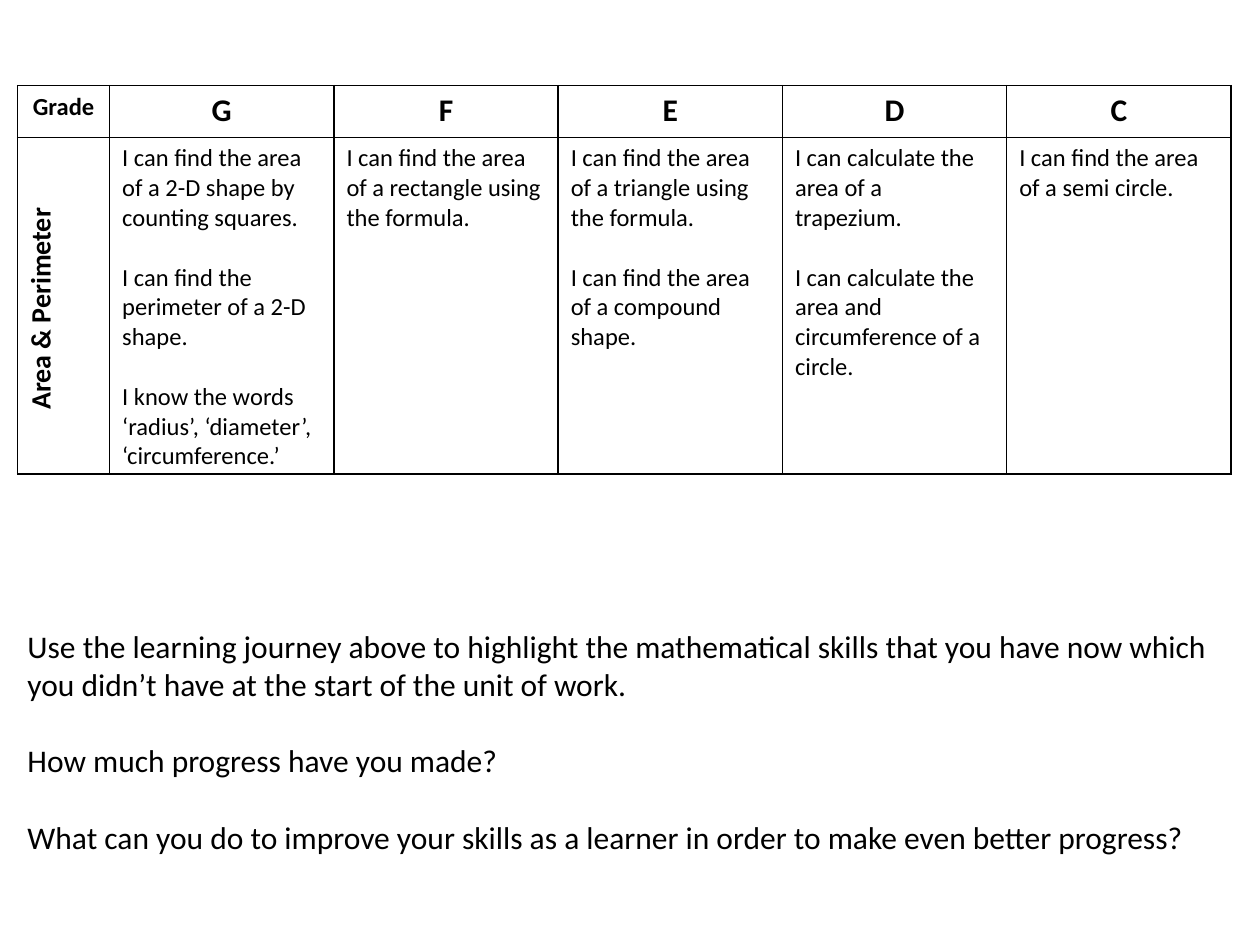
import pptx
import pptx.util
import pptx.dml.color
import pptx.enum.text
import pptx.oxml
import pptx.oxml.ns

Inches = pptx.util.Inches
Pt = pptx.util.Pt
ALIGN = pptx.enum.text.PP_ALIGN


def color(code):
    return pptx.dml.color.RGBColor.from_string(code)


def write(frame, lines, size, bold=False, align=ALIGN.LEFT, gap=0):
    """Fill a text frame, one paragraph a line, with a gap between them."""
    look = {"name": "Calibri", "size": Pt(size), "bold": bold}
    for i, line in enumerate(lines):
        para = frame.paragraphs[0] if i == 0 else frame.add_paragraph()
        para.alignment = align
        para.space_before = Pt(gap if i else 0)
        run = para.add_run()
        run.text = line
        for key, value in look.items():
            setattr(run.font, key, value)
        run.font.color.rgb = color("000000")


deck = pptx.Presentation()
deck.slide_width, deck.slide_height = Inches(10), Inches(7.5)
slide = deck.slides.add_slide(deck.slide_layouts[6])

# Prompts below the table
box = slide.shapes.add_textbox(Inches(0.12), Inches(4.93), Inches(9.76), Inches(1.92))
box.text_frame.word_wrap = True
write(box.text_frame, [
    "Use the learning journey above to highlight the mathematical skills that you "
    "have now which you didn’t have at the start of the unit of work.",
    "How much progress have you made?",
    "What can you do to improve your skills as a learner in order to make even better progress?",
], 18, gap=22)

# Skills for each grade
skills = {
    "G": ["I can find the area of a 2-D shape by counting squares.",
          "I can find the perimeter of a 2-D shape.",
          "I know the words ‘radius’, ‘diameter’, ‘circumference.’"],
    "F": ["I can find the area of a rectangle using the formula."],
    "E": ["I can find the area of a triangle using the formula.",
          "I can find the area of a compound shape."],
    "D": ["I can calculate the area of a trapezium.",
          "I can calculate the area and circumference of a circle."],
    "C": ["I can find the area of a semi circle."],
}

# Table grid
frame = slide.shapes.add_table(2, 6, Inches(0.14), Inches(0.68), Inches(9.61), Inches(3.07))
table = frame.table
for key in ("first_row", "horz_banding"):
    setattr(table, key, False)
for col, width in zip(table.columns, [0.73] + [1.78] * 5):
    col.width = Inches(width)
for row, height in zip(table.rows, [0.41, 2.66]):
    row.height = Inches(height)

# Clear fills, black borders
for cell in table.iter_cells():
    cell.fill.background()
    props = cell._tc.get_or_add_tcPr()
    for i, side in enumerate("LRTB"):
        props.insert(i, pptx.oxml.parse_xml(
            f'<a:ln{side} {pptx.oxml.ns.nsdecls("a")} w="12700"><a:solidFill>'
            f'<a:srgbClr val="000000"/></a:solidFill></a:ln{side}>'))

# Row labels
write(table.cell(0, 0).text_frame, ["Grade"], 14, True, ALIGN.CENTER)
topic = table.cell(1, 0)
topic._tc.get_or_add_tcPr().set("vert", "vert270")
write(topic.text_frame, ["Area & Perimeter "], 16, True, ALIGN.CENTER)

# Grade columns
for i, (grade, lines) in enumerate(skills.items(), 1):
    write(table.cell(0, i).text_frame, [grade], 18, True, ALIGN.CENTER)
    write(table.cell(1, i).text_frame, lines, 14, gap=17)

deck.save("out.pptx")
